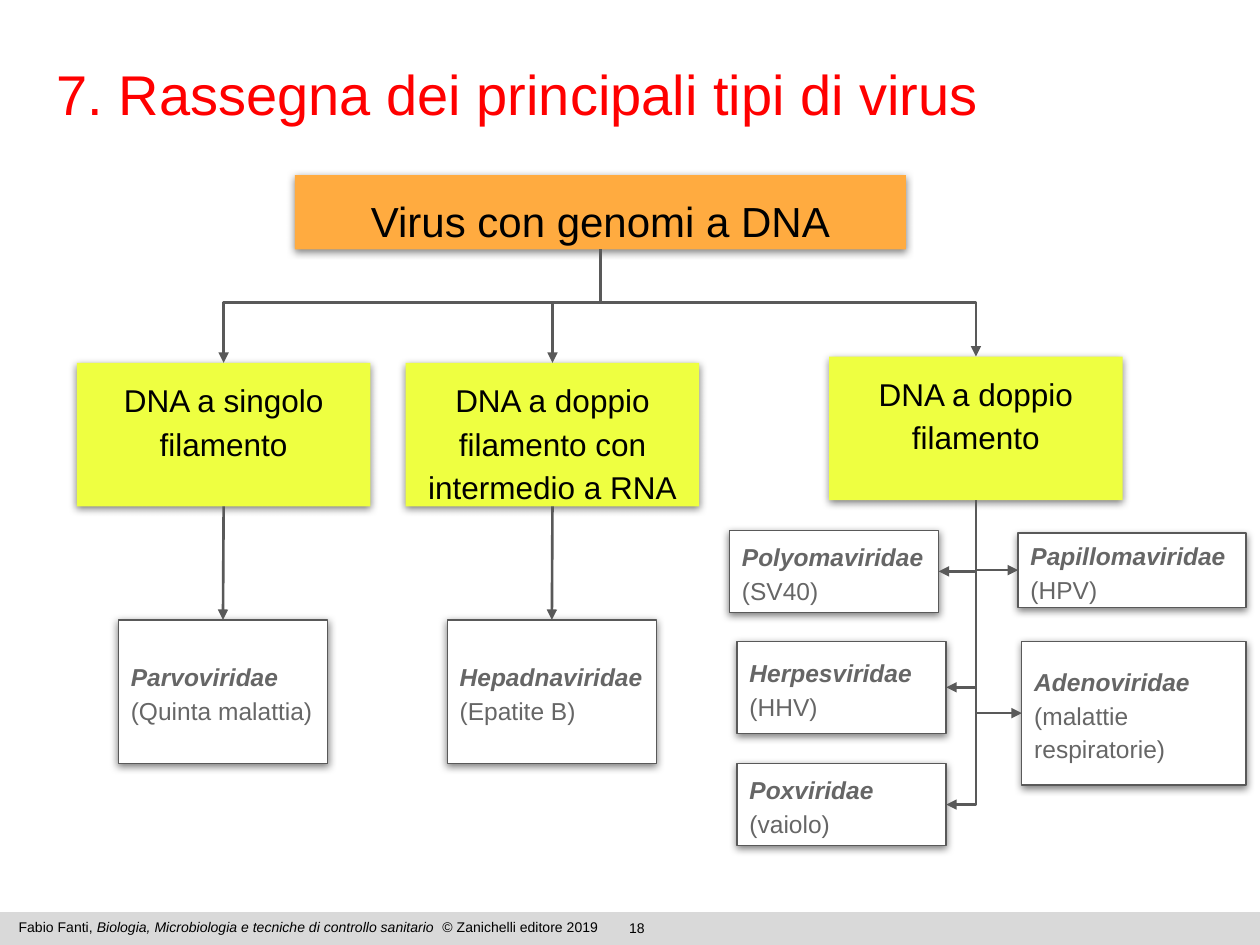
import pptx
import pptx.util
import pptx.dml.color
import pptx.enum.shapes
import pptx.enum.text
import pptx.oxml
import pptx.oxml.ns
from dataclasses import dataclass


@dataclass(frozen=True)
class Theme:
    font: str = "Arial"
    title: str = "FF0000"
    text: str = "000000"
    family_text: str = "666666"
    line: str = "595959"
    root_fill: str = "FFAB40"
    branch_fill: str = "EEFF41"
    family_fill: str = "FFFFFF"
    footer_fill: str = "D9D9D9"
    title_size: int = 32
    root_size: int = 24
    branch_size: int = 18
    family_size: int = 14
    footer_size: int = 8


THEME = Theme()
WIDTH, HEIGHT = pptx.util.Inches(10), pptx.util.Inches(7.5)
TOP, LEFT, BOTTOM, RIGHT = range(4)

TITLE = "7. Rassegna dei principali tipi di virus"
ROOT = "Virus con genomi a DNA"
FOOTER = [
    ("Fabio Fanti, ", False),
    ("Biologia, Microbiologia e tecniche di controllo sanitario", True),
    ("  © Zanichelli editore 2019", False),
]
PAGE = "18"

# Every box is (left, top, width, height) in percent of the slide.
TITLE_BOX = (3.5, 5.6, 96.5, 12.93)
ROOT_BOX = (23.4, 18.53, 48.5, 7.87)
FOOTER_BAND = (0, 96.53, 100, 3.47)
FOOTER_BOX = (0.5, 96.53, 50.4, 3.2)
PAGE_BOX = (39.4, 96.67, 22.3, 2.27)
BRANCH_SIZE = (23.3, 15.2)
FAMILY_WIDTH = 16.6
BUS_TOP = 32

BRANCHES = [
    ("DNA a singolo filamento", 6.1, 38.4, [
        ("Parvoviridae", "(Quinta malattia)", (9.4, 65.6, FAMILY_WIDTH, 15.2), TOP),
    ]),
    ("DNA a doppio filamento con intermedio a RNA", 32.2, 38.4, [
        ("Hepadnaviridae", "(Epatite B)", (35.5, 65.6, FAMILY_WIDTH, 15.2), TOP),
    ]),
    ("DNA a doppio filamento", 65.8, 37.73, [
        ("Polyomaviridae", "(SV40)", (57.9, 56.13, FAMILY_WIDTH, 8.67), RIGHT),
        ("Papillomaviridae", "(HPV)", (80.8, 56.4, 18.1, 7.87), LEFT),
        ("Herpesviridae", "(HHV)", (58.5, 67.87, FAMILY_WIDTH, 9.73), RIGHT),
        ("Adenoviridae", "(malattie respiratorie)", (81.1, 67.87, 17.8, 15.2), LEFT),
        ("Poxviridae", "(vaiolo)", (58.5, 80.8, FAMILY_WIDTH, 8.67), RIGHT),
    ]),
]


def rgb(color):
    return pptx.dml.color.RGBColor.from_string(color)


def xml(tag, content="", attributes=""):
    return pptx.oxml.parse_xml(
        f"<a:{tag} {pptx.oxml.ns.nsdecls('a')} {attributes}>{content}</a:{tag}>")


def place(box):
    left, top, width, height = box
    return [round(WIDTH * left / 100), round(HEIGHT * top / 100),
            round(WIDTH * width / 100), round(HEIGHT * height / 100)]


def write(shape, runs, size, color, centered=False, spacing=1.0, inset=0.1, middle=False):
    frame = shape.text_frame
    frame.word_wrap = True
    frame.auto_size = pptx.enum.text.MSO_AUTO_SIZE.NONE
    anchors = pptx.enum.text.MSO_ANCHOR
    frame.vertical_anchor = anchors.MIDDLE if middle else anchors.TOP
    frame.margin_left = frame.margin_right = pptx.util.Inches(0.1)
    frame.margin_top = frame.margin_bottom = pptx.util.Inches(inset)
    paragraph = frame.paragraphs[0]
    alignments = pptx.enum.text.PP_ALIGN
    paragraph.alignment = alignments.CENTER if centered else alignments.LEFT
    paragraph.line_spacing = spacing
    font = paragraph.font
    font.name, font.size = THEME.font, pptx.util.Pt(size)
    font.color.rgb = rgb(color)
    for text, bold, italic in runs:
        run = paragraph.add_run()
        run.text = text
        if bold:
            run.font.bold = True
        if italic:
            run.font.italic = True


def add_rectangle(slide, box, fill):
    shape = slide.shapes.add_shape(pptx.enum.shapes.MSO_SHAPE.RECTANGLE, *place(box))
    shape.shadow.inherit = False
    shape.fill.solid()
    shape.fill.fore_color.rgb = rgb(fill)
    shape.line.fill.background()
    return shape


def add_node(slide, box, fill, outlined=False):
    shape = add_rectangle(slide, box, fill)
    if outlined:
        shape.line.color.rgb = rgb(THEME.line)
        shape.line.width = pptx.util.Pt(0.75)
    effects = shape._element.spPr.find(pptx.oxml.ns.qn("a:effectLst"))
    effects.append(xml(
        "outerShdw", '<a:srgbClr val="000000"><a:alpha val="50000"/></a:srgbClr>',
        'blurRad="57150" dist="19050" dir="5400000" algn="bl" rotWithShape="0"'))
    return shape


def connect(slide, parent, child, side):
    start_x, start_y = parent.left + parent.width // 2, parent.top + parent.height
    end_x = child.left + {TOP: child.width // 2, LEFT: 0, RIGHT: child.width}[side]
    end_y = child.top + (0 if side == TOP else child.height // 2)
    across, down = end_x - start_x, end_y - start_y
    straight = abs(across) < pptx.util.Inches(0.02)
    kinds = pptx.enum.shapes.MSO_CONNECTOR
    connector = slide.shapes.add_connector(
        kinds.STRAIGHT if straight else kinds.ELBOW, start_x, start_y, end_x, end_y)
    connector.begin_connect(parent, BOTTOM)
    connector.end_connect(child, side)
    properties = connector._element.spPr
    if not straight:
        connector.width, connector.height = down, abs(across)
        connector.left = (start_x + end_x - down) // 2
        connector.top = (start_y + end_y - abs(across)) // 2
        transform = properties.find(pptx.oxml.ns.qn("a:xfrm"))
        transform.attrib.pop("flipH", None)
        transform.attrib.pop("flipV", None)
        transform.set("rot", "5400000" if across < 0 else "16200000")
        if across > 0:
            transform.set("flipH", "1")
        geometry = properties.find(pptx.oxml.ns.qn("a:prstGeom"))
        if side == TOP:
            bend = round((HEIGHT * BUS_TOP / 100 - start_y) / down * 100000)
            guides = geometry.get_or_add_avLst()
            guides.append(xml("gd", attributes=f'name="adj1" fmla="val {bend}"'))
        else:
            geometry.set("prst", "bentConnector2")
    connector.line.color.rgb = rgb(THEME.line)
    connector.line.width = pptx.util.Pt(1.5)
    connector.line._get_or_add_ln().append(xml("tailEnd", attributes='type="triangle"'))
    properties.append(xml("effectLst"))


def add_footer(slide):
    add_rectangle(slide, FOOTER_BAND, THEME.footer_fill)
    runs = [(text, False, italic) for text, italic in FOOTER]
    for box, content, centered in ((FOOTER_BOX, runs, False),
                                   (PAGE_BOX, [(PAGE, False, False)], True)):
        write(slide.shapes.add_textbox(*place(box)), content, THEME.footer_size,
              THEME.text, centered, inset=0.05)


def add_tree(slide):
    root = add_node(slide, ROOT_BOX, THEME.root_fill)
    write(root, [(ROOT, False, False)], THEME.root_size, THEME.text, True, 1.15)
    for label, left, top, families in BRANCHES:
        branch = add_node(slide, (left, top, *BRANCH_SIZE), THEME.branch_fill)
        write(branch, [(label, False, False)], THEME.branch_size, THEME.text, True, 1.15)
        connect(slide, root, branch, TOP)
        for name, note, box, side in families:
            family = add_node(slide, box, THEME.family_fill, outlined=True)
            write(family, [(name, True, True), (" " + note, False, False)],
                  THEME.family_size, THEME.family_text, spacing=1.15, middle=True)
            connect(slide, branch, family, side)


def main():
    presentation = pptx.Presentation()
    presentation.slide_width, presentation.slide_height = WIDTH, HEIGHT
    slide = presentation.slides.add_slide(presentation.slide_layouts[5])
    title = slide.shapes.title
    title.left, title.top, title.width, title.height = place(TITLE_BOX)
    write(title, [(TITLE, False, False)], THEME.title_size, THEME.title, inset=0.05)
    add_footer(slide)
    add_tree(slide)
    presentation.save("out.pptx")


if __name__ == "__main__":
    main()
